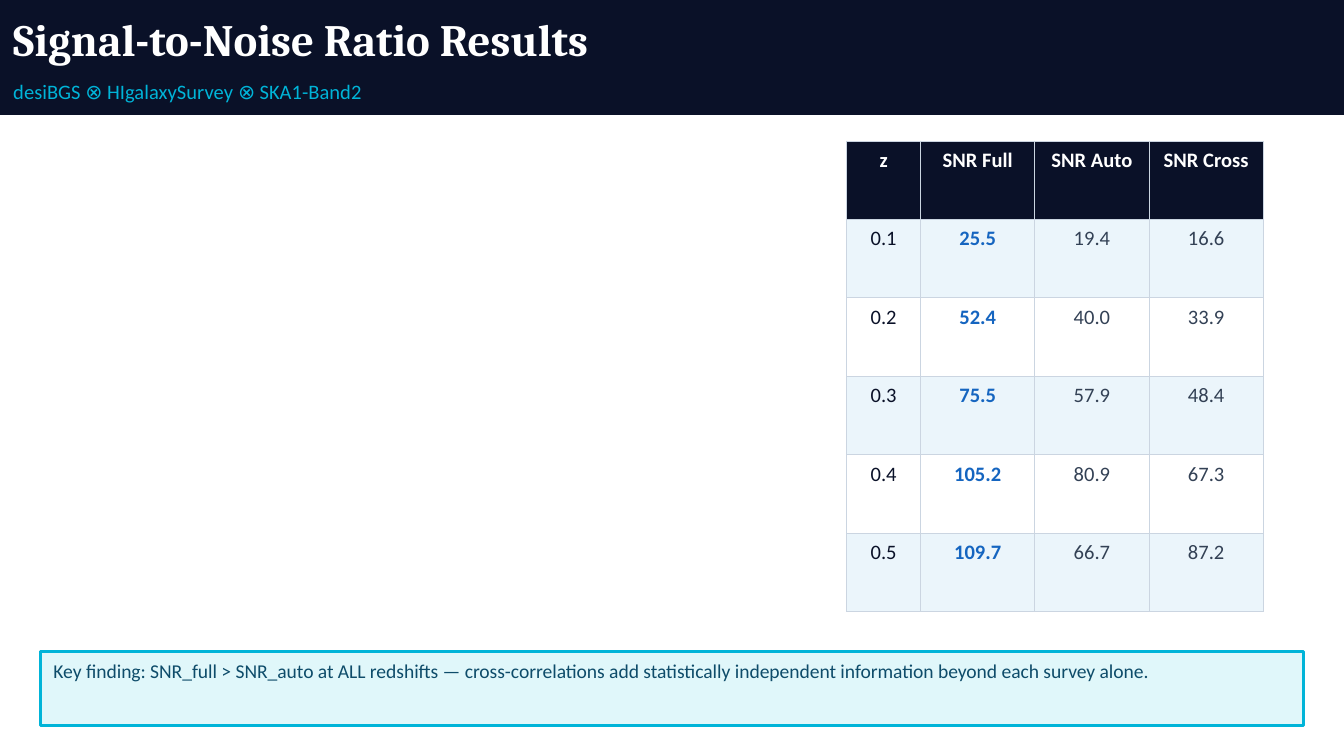
from lxml import etree
from pptx import Presentation
from pptx.dml.color import RGBColor
from pptx.enum.shapes import MSO_SHAPE
from pptx.enum.text import PP_ALIGN
from pptx.oxml.ns import qn
from pptx.util import Inches, Pt

RECTANGLE = MSO_SHAPE.RECTANGLE
CENTER = PP_ALIGN.CENTER

NAVY = RGBColor(0x0A, 0x11, 0x28)
WHITE = RGBColor(0xFF, 0xFF, 0xFF)
CYAN = RGBColor(0x00, 0xB4, 0xD8)
PALE_CYAN = RGBColor(0xE0, 0xF7, 0xFA)
TEAL = RGBColor(0x0E, 0x4C, 0x6A)
BLUE = RGBColor(0x15, 0x65, 0xC0)
SLATE = RGBColor(0x33, 0x41, 0x55)
PALE_BLUE = RGBColor(0xEB, 0xF5, 0xFB)
BORDER = RGBColor(0xCB, 0xD5, 0xE1)

SLIDE_WIDTH = Inches(10)
SLIDE_HEIGHT = SLIDE_WIDTH * 9 // 16
GRID = SLIDE_WIDTH / 100  # square grid, 100 columns across the slide

TITLE_FONT = {"name": "Cambria", "size": Pt(24), "bold": True}
SUBTITLE_FONT = {"name": "Calibri", "size": Pt(11)}
FINDING_FONT = {"name": "Calibri", "size": Pt(10.5)}
HEADER_FONT = {"name": "Calibri", "size": Pt(11), "bold": True}
BODY_FONT = {"name": "Calibri", "size": Pt(11), "bold": False}

HEADERS = ("z", "SNR Full", "SNR Auto", "SNR Cross")
RESULTS = (
    ("0.1", "25.5", "19.4", "16.6"),
    ("0.2", "52.4", "40.0", "33.9"),
    ("0.3", "75.5", "57.9", "48.4"),
    ("0.4", "105.2", "80.9", "67.3"),
    ("0.5", "109.7", "66.7", "87.2"),
)
COLUMN_WIDTHS = (5.5, 8.5, 8.5, 8.5)
COLUMN_STYLES = (
    (BODY_FONT, NAVY),
    (HEADER_FONT, BLUE),
    (BODY_FONT, SLATE),
    (BODY_FONT, SLATE),
)


def cells(*lengths):
    """Turn grid lengths into slide units."""
    return [round(length * GRID) for length in lengths]


def write(paragraph, text, font_format, color):
    run = paragraph.add_run()
    run.text = text
    for attribute, value in font_format.items():
        setattr(run.font, attribute, value)
    run.font.color.rgb = color


def add_panel(slide, area, fill, line, line_width):
    shape = slide.shapes.add_shape(RECTANGLE, *cells(*area))
    shape.shadow.inherit = False
    shape.fill.solid()
    shape.fill.fore_color.rgb = fill
    shape.line.color.rgb = line
    shape.line.width = Pt(line_width)


def add_text(slide, area, text, font_format, color):
    frame = slide.shapes.add_textbox(*cells(*area)).text_frame
    frame.word_wrap = True
    write(frame.paragraphs[0], text, font_format, color)


def add_borders(cell):
    properties = cell._tc.get_or_add_tcPr()
    for side in ("lnL", "lnR", "lnT", "lnB"):
        line = etree.SubElement(properties, qn(f"a:{side}"), w=str(Pt(0.5)))
        fill = etree.SubElement(line, qn("a:solidFill"))
        etree.SubElement(fill, qn("a:srgbClr"), val=str(BORDER))


def fill_cell(cell, text, font_format, color, background):
    add_borders(cell)
    cell.fill.solid()
    cell.fill.fore_color.rgb = background
    paragraph = cell.text_frame.paragraphs[0]
    paragraph.alignment = CENTER
    write(paragraph, text, font_format, color)


def add_results_table(slide, area):
    frame = slide.shapes.add_table(len(RESULTS) + 1, len(HEADERS), *cells(*area))
    table = frame.table
    table.first_row = table.horz_banding = False
    for column, width in zip(table.columns, cells(*COLUMN_WIDTHS)):
        column.width = width
    for column, header in enumerate(HEADERS):
        fill_cell(table.cell(0, column), header, HEADER_FONT, WHITE, NAVY)
    for row, values in enumerate(RESULTS, start=1):
        background = PALE_BLUE if row % 2 else WHITE
        for column, (value, style) in enumerate(zip(values, COLUMN_STYLES)):
            fill_cell(table.cell(row, column), value, *style, background)


def main():
    presentation = Presentation()
    presentation.slide_width = SLIDE_WIDTH
    presentation.slide_height = SLIDE_HEIGHT
    slide = presentation.slides.add_slide(presentation.slide_layouts[6])

    add_panel(slide, (3, 48.5, 94, 5.5), PALE_CYAN, CYAN, 1.5)
    add_text(
        slide, (3, 48.53, 94, 4.9),
        "Key finding: SNR_full > SNR_auto at ALL redshifts — cross-correlations add "
        "statistically independent information beyond each survey alone.",
        FINDING_FONT, TEAL,
    )
    add_results_table(slide, (63, 10.5, sum(COLUMN_WIDTHS), 35))
    add_panel(slide, (0, 0, 100, 8.5), NAVY, NAVY, 1)
    add_text(slide, (0, 0.4, 50.1, 5.5), "Signal-to-Noise Ratio Results",
             TITLE_FONT, WHITE)
    add_text(slide, (0, 5.4, 31.9, 3.1), "desiBGS ⊗ HIgalaxySurvey ⊗ SKA1-Band2",
             SUBTITLE_FONT, CYAN)
    presentation.save("out.pptx")


if __name__ == "__main__":
    main()
